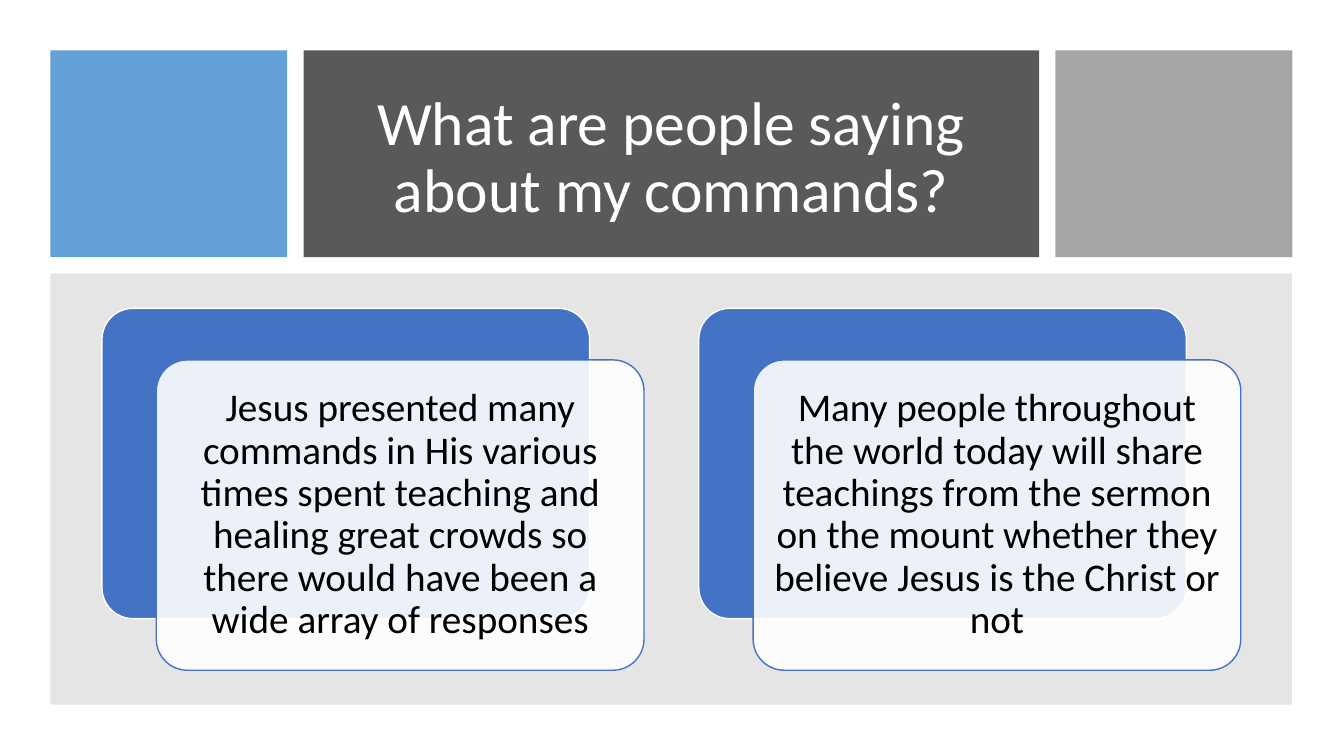
from dataclasses import dataclass

from lxml import etree
from pptx import Presentation
from pptx import util as u
from pptx.dml.color import RGBColor
from pptx.enum import shapes, text
from pptx.oxml.ns import qn

COLOURS = {
    "sky": "5B9BD5",
    "charcoal": "595959",
    "silver": "A5A5A5",
    "grey": "808080",
    "blue": "4472C4",
    "white": "FFFFFF",
    "black": "000000",
}
FONT = "Calibri"
MARGIN, GAP = 1.27, 0.41
HEADER_HEIGHT = 5.21
SIDE_WIDTH, TITLE_WIDTH = 5.97, 18.54
BODY_WIDTH, BODY_HEIGHT = 31.29, 10.87
CARD_LEFT, CARD_TOP, CARD_PITCH = 2.57, 7.77, 15.04
CARD_WIDTH, CARD_HEIGHT = 12.29, 7.82
CARD_SHIFT_X, CARD_SHIFT_Y = 1.37, 1.3
CARD_INSET, TEXT_MARGIN = 0.23, 0.3

STATEMENTS = [
    "Jesus presented many commands in His various times spent teaching and "
    "healing great crowds so there would have been a wide array of responses",
    "Many people throughout the world today will share teachings from the sermon "
    "on the mount whether they believe Jesus is the Christ or not",
]


@dataclass
class Box:
    left: float
    top: float
    width: float
    height: float

    def lengths(self) -> list[u.Cm]:
        return [u.Cm(v) for v in (self.left, self.top, self.width, self.height)]

    def shifted(self, dx: float, dy: float) -> "Box":
        return Box(self.left + dx, self.top + dy, self.width, self.height)

    def inset(self, by: float) -> "Box":
        return Box(self.left + by, self.top + by, self.width - 2 * by, self.height - 2 * by)


@dataclass
class Panel:
    box: Box
    fill: str
    opacity: int = 100
    line: str | None = None
    rounded: bool = False


def rgb(colour: str) -> RGBColor:
    return RGBColor.from_string(COLOURS[colour])


def draw_panel(slide, panel: Panel):
    kind = shapes.MSO_SHAPE.ROUNDED_RECTANGLE if panel.rounded else shapes.MSO_SHAPE.RECTANGLE
    shape = slide.shapes.add_shape(kind, *panel.box.lengths())
    shape.shadow.inherit = False
    if panel.rounded:
        shape.adjustments[0] = 0.1
    shape.fill.solid()
    shape.fill.fore_color.rgb = rgb(panel.fill)
    if panel.opacity < 100:
        fill_colour = shape.element.spPr.find(qn("a:solidFill"))[0]
        etree.SubElement(fill_colour, qn("a:alpha"), val=str(panel.opacity * 1000))
    if panel.line:
        shape.line.color.rgb = rgb(panel.line)
        shape.line.width = u.Pt(1)
    else:
        shape.line.fill.background()
    return shape


def write_centred(frame, wording: str, size: int, colour: str) -> None:
    frame.text = wording
    frame.word_wrap = True
    frame.auto_size = text.MSO_AUTO_SIZE.NONE
    frame.vertical_anchor = text.MSO_ANCHOR.MIDDLE
    paragraph = frame.paragraphs[0]
    paragraph.alignment = text.PP_ALIGN.CENTER
    paragraph.line_spacing = 0.9
    font = paragraph.runs[0].font
    font.name, font.size = FONT, u.Pt(size)
    font.color.rgb = rgb(colour)


def draw_header(slide) -> None:
    title_left = MARGIN + SIDE_WIDTH + GAP
    right_left = title_left + TITLE_WIDTH + GAP
    draw_panel(slide, Panel(Box(MARGIN, MARGIN, SIDE_WIDTH, HEADER_HEIGHT), "sky", 95))
    title_panel = draw_panel(
        slide, Panel(Box(title_left, MARGIN, TITLE_WIDTH, HEADER_HEIGHT), "charcoal"))
    draw_panel(slide, Panel(Box(right_left, MARGIN, SIDE_WIDTH, HEADER_HEIGHT), "silver"))

    title = slide.shapes.title
    title.left, title.top, title.width, title.height = Box(8.46, 2.03, 16.92, 3.96).lengths()
    write_centred(title.text_frame, "What are people saying about my commands?", 44, "white")
    title_panel.element.addnext(title.element)


def draw_card(slide, back: Box, statement: str) -> None:
    """Draw a blue card, the translucent card overlapping it, and its statement."""
    front = back.shifted(CARD_SHIFT_X, CARD_SHIFT_Y)
    draw_panel(slide, Panel(back, "blue", line="white", rounded=True))
    draw_panel(slide, Panel(front, "white", 90, line="blue", rounded=True))
    frame = slide.shapes.add_textbox(*front.inset(CARD_INSET).lengths()).text_frame
    frame.margin_left = frame.margin_right = u.Cm(TEXT_MARGIN)
    frame.margin_top = frame.margin_bottom = u.Cm(TEXT_MARGIN)
    write_centred(frame, statement, 28, "black")


def main() -> None:
    deck = Presentation()
    deck.slide_width, deck.slide_height = u.Cm(33.87), u.Cm(19.05)
    slide = deck.slides.add_slide(deck.slide_layouts[5])
    draw_header(slide)
    body_top = MARGIN + HEADER_HEIGHT + GAP
    draw_panel(slide, Panel(Box(MARGIN, body_top, BODY_WIDTH, BODY_HEIGHT), "grey", 20))
    first_card = Box(CARD_LEFT, CARD_TOP, CARD_WIDTH, CARD_HEIGHT)
    for column, statement in enumerate(STATEMENTS):
        draw_card(slide, first_card.shifted(column * CARD_PITCH, 0), statement)
    deck.save("out.pptx")


if __name__ == "__main__":
    main()
